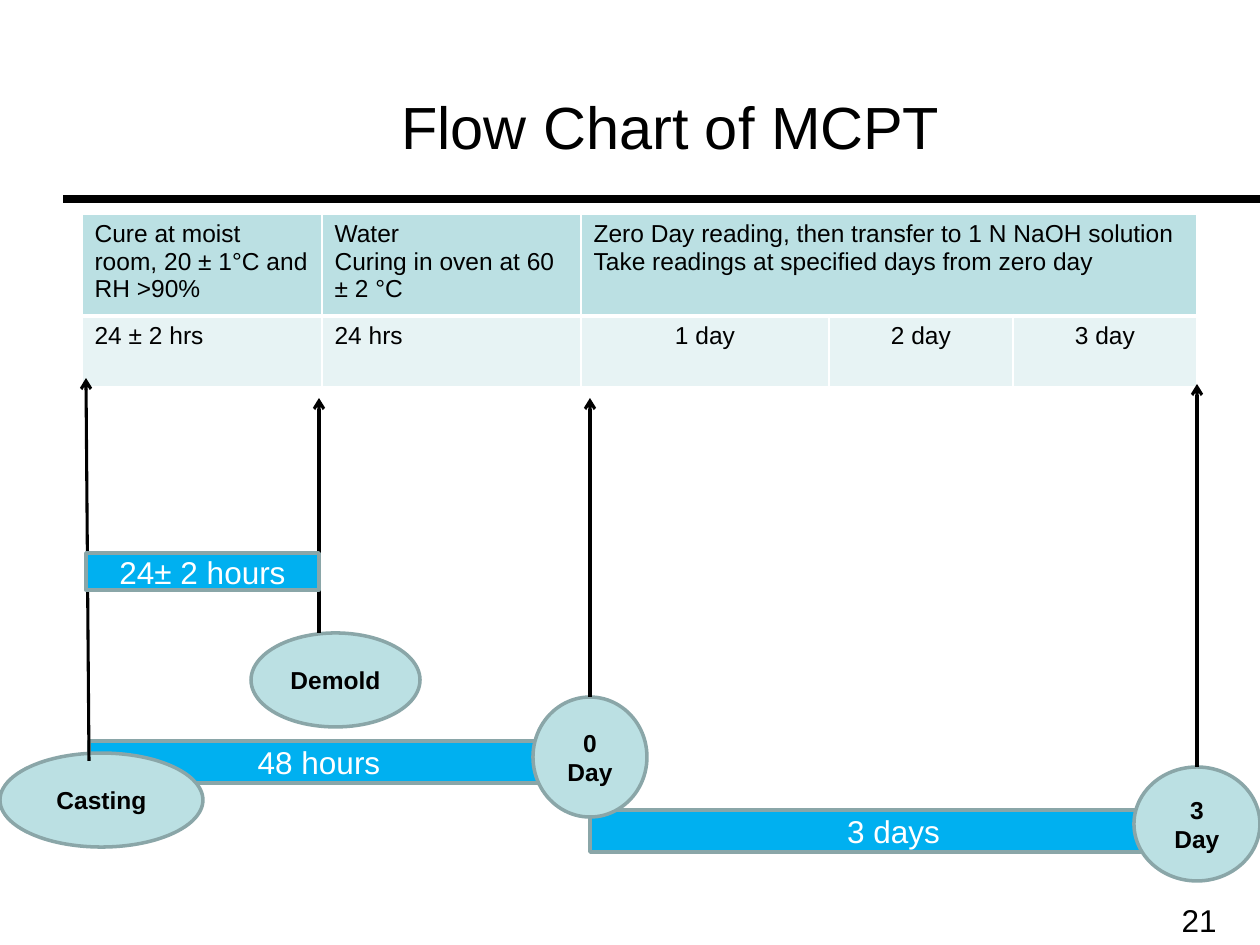
from dataclasses import dataclass

from pptx import Presentation
from pptx.dml.color import RGBColor
from pptx.enum.shapes import MSO_CONNECTOR, MSO_SHAPE
from pptx.enum.text import MSO_ANCHOR, MSO_AUTO_SIZE, PP_ALIGN
from pptx.oxml.ns import qn
from pptx.util import Pt
from lxml.etree import SubElement

EMU_PER_PIXEL = 914400 / 126


def px(length):
    """Turn a length in pixels into EMU."""
    return round(length * EMU_PER_PIXEL)


@dataclass(frozen=True)
class Theme:
    """Colours, type sizes and line widths of the deck."""

    font: str = "Arial"
    ink: str = "000000"
    paper: str = "FFFFFF"
    bar: str = "00B0F0"
    tint: str = "BBE0E3"
    pale: str = "E7F3F4"
    outline: str = "8AA6A8"
    title_size: int = 34
    bar_size: int = 18
    label_size: int = 14
    outline_width: int = 2
    arrow_width: float = 1.75
    rule_width: float = 4.5


class SlideBuilder:
    """Draws styled elements on the current slide."""

    def __init__(self, slide, theme):
        """Keep the slide and its style."""
        self.slide = slide
        self.theme = theme

    def add_lines(self, frame, lines, size, color, bold=False, align=PP_ALIGN.LEFT):
        """Fill a text frame with one paragraph per line."""
        formats = {"name": self.theme.font, "size": Pt(size), "bold": bold}
        for index, line in enumerate(lines):
            para = frame.paragraphs[0] if index == 0 else frame.add_paragraph()
            para.alignment = align
            span = para.add_run()
            span.text = line
            for name, value in formats.items():
                setattr(span.font, name, value)
            span.font.color.rgb = RGBColor.from_string(color)

    def shape(self, kind, bounds, text, fill, size, color, bold):
        """Add an outlined shape with a centred label."""
        box = self.slide.shapes.add_shape(kind, *map(px, bounds))
        box.shadow.inherit = False
        box.fill.solid()
        box.fill.fore_color.rgb = RGBColor.from_string(fill)
        box.line.color.rgb = RGBColor.from_string(self.theme.outline)
        box.line.width = Pt(self.theme.outline_width)
        box.text_frame.word_wrap = True
        box.text_frame.vertical_anchor = MSO_ANCHOR.MIDDLE
        self.add_lines(box.text_frame, [text], size, color, bold, PP_ALIGN.CENTER)
        return box

    def bar(self, bounds, text):
        """Add a duration bar."""
        theme = self.theme
        return self.shape(MSO_SHAPE.RECTANGLE, bounds, text, theme.bar,
                          theme.bar_size, theme.paper, False)

    def event(self, bounds, text):
        """Add an event ellipse."""
        theme = self.theme
        return self.shape(MSO_SHAPE.OVAL, bounds, text, theme.tint,
                          theme.label_size, theme.ink, True)

    def line(self, start, end, width):
        """Add a straight black line without shadow."""
        line = self.slide.shapes.add_connector(
            MSO_CONNECTOR.STRAIGHT, *map(px, (*start, *end)))
        line.line.color.rgb = RGBColor.from_string(self.theme.ink)
        line.line.width = Pt(width)
        SubElement(line._element.spPr, qn("a:effectLst"))
        return line

    def arrow(self, start, end, source=None):
        """Add an arrow, joined to the top of its source if given."""
        arrow = self.line(start, end, self.theme.arrow_width)
        outline = arrow._element.spPr.find(qn("a:ln"))
        SubElement(outline, qn("a:tailEnd"), type="arrow")
        if source is not None:
            arrow.begin_connect(source, 0)

    def text(self, bounds, text, size, align=PP_ALIGN.LEFT, wrap=True):
        """Add a text box that grows with its text."""
        box = self.slide.shapes.add_textbox(*map(px, bounds))
        box.text_frame.word_wrap = wrap
        box.text_frame.auto_size = MSO_AUTO_SIZE.SHAPE_TO_FIT_TEXT
        self.add_lines(box.text_frame, [text], size, self.theme.ink, align=align)

    def border(self, cell, bottom):
        """Draw the white borders of a cell."""
        properties = cell._tc.get_or_add_tcPr()
        widths = {"a:lnL": 1, "a:lnR": 1, "a:lnT": 1, "a:lnB": bottom}
        for index, (tag, width) in enumerate(widths.items()):
            edge = SubElement(properties, qn(tag), w=str(Pt(width)))
            properties.insert(index, edge)
            fill = SubElement(edge, qn("a:solidFill"))
            SubElement(fill, qn("a:srgbClr"), val=self.theme.paper)

    def table(self, left, top, widths, heights, rows):
        """Add a schedule table whose header spans the reading days."""
        table = self.slide.shapes.add_table(
            len(heights), len(widths), px(left), px(top),
            px(sum(widths)), px(sum(heights))).table
        for column, width in zip(table.columns, widths):
            column.width = px(width)
        for row, height in zip(table.rows, heights):
            row.height = px(height)
        table.cell(0, 2).merge(table.cell(0, len(widths) - 1))
        fills = (self.theme.tint, self.theme.pale)
        for row, (texts, fill) in enumerate(zip(rows, fills)):
            for column in range(len(widths)):
                cell = table.cell(row, column)
                cell.fill.solid()
                cell.fill.fore_color.rgb = RGBColor.from_string(fill)
                self.border(cell, 3 if row == 0 else 1)
                if column < len(texts):
                    centred = row == 1 and column >= 2
                    self.add_lines(cell.text_frame, texts[column],
                                   self.theme.label_size, self.theme.ink,
                                   align=PP_ALIGN.CENTER if centred else PP_ALIGN.LEFT)


def main():
    """Build the test schedule slide."""
    deck = Presentation()
    deck.slide_width, deck.slide_height = px(1260), px(945)
    theme = Theme()
    page = SlideBuilder(deck.slides.add_slide(deck.slide_layouts[6]), theme)

    page.line((63, 199), (1260, 199), theme.rule_width)
    page.bar((590, 810, 607, 42), "3 days")
    page.bar((89, 741, 460, 42), "48 hours")
    page.table(82, 214, (240, 259, 248, 184, 184), (102, 71), (
        (("Cure at moist room, 20 ± 1°C and", "RH >90%"),
         ("Water", "Curing in oven at 60 ± 2 °C"),
         ("Zero Day reading, then transfer to 1 N NaOH solution",
          "Take readings at specified days from zero day")),
        (("24 ± 2 hrs",), ("24 hrs",), ("1 day",), ("2 day",), ("3 day",)),
    ))
    page.event((251, 633, 169, 94), "Demold")
    page.event((0, 753, 203, 94), "Casting")
    page.arrow((89, 761), (86, 378))
    zero_day = page.event((533, 697, 114, 120), "0 Day")
    page.arrow((319, 633), (319, 398))
    page.arrow((590, 697), (590, 398), zero_day)
    three_day = page.event((1134, 767, 126, 114), "3 Day")
    page.arrow((1197, 767), (1197, 384), three_day)
    page.bar((86, 553, 233, 37), "24± 2 hours")
    page.text((389, 84, 585, 84), "Flow Chart of MCPT", theme.title_size, wrap=False)
    page.text((977, 895, 252, 50), "21", theme.bar_size, PP_ALIGN.RIGHT)
    deck.save("out.pptx")


if __name__ == "__main__":
    main()
